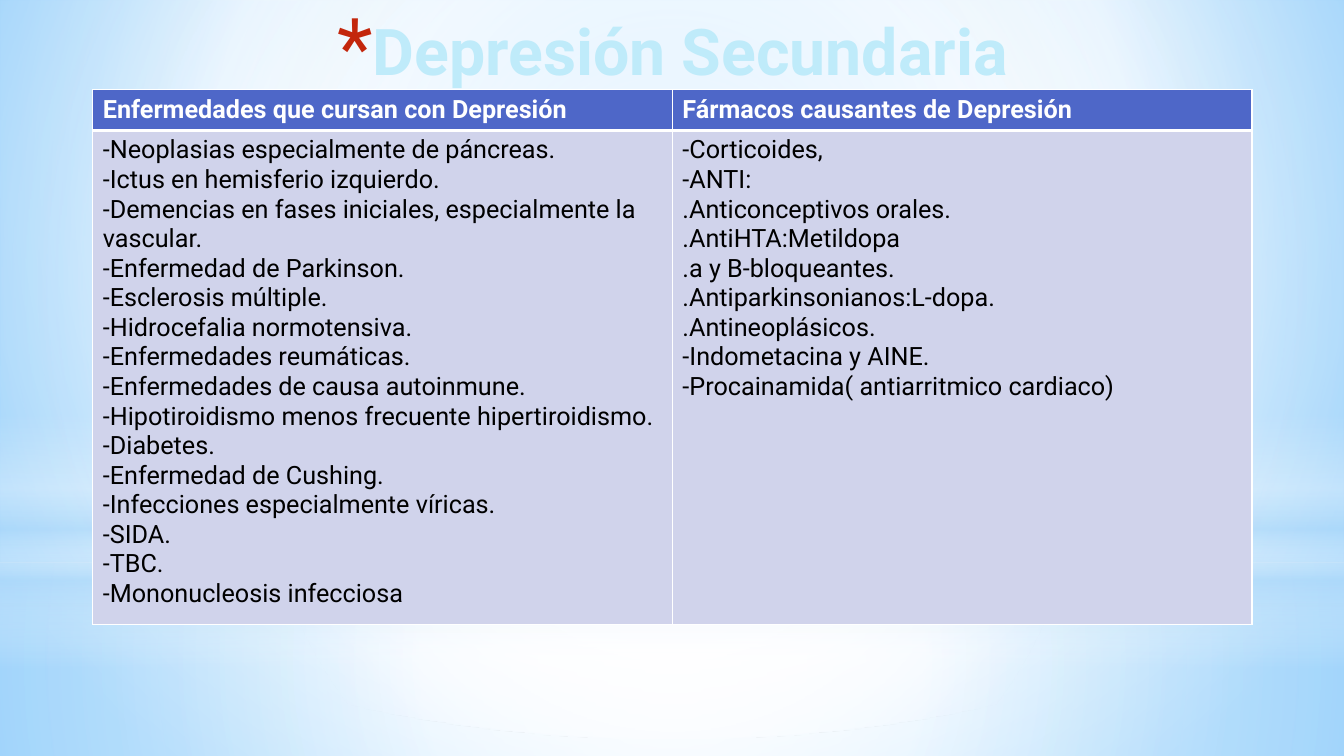
"""Build the slide on secondary depression."""
from dataclasses import dataclass

from lxml.etree import SubElement
from pptx import Presentation
from pptx.dml.color import RGBColor as Rgb
from pptx.enum.shapes import MSO_SHAPE as Preset
from pptx.enum.text import MSO_ANCHOR as Anchor, PP_ALIGN as Align
from pptx.oxml import parse_xml
from pptx.oxml.ns import nsdecls, qn
from pptx.util import Cm, Pt


@dataclass(frozen=True)
class Theme:
    """Colours, font and type sizes."""
    font: str = "Roboto"
    title_size: int = 46
    body_size: int = 18
    white: str = "FFFFFF"
    black: str = "000000"
    haze: str = "B4DCFA"
    sky: str = "9ED5FF"
    deep_sky: str = "5BB9FF"
    title: str = "BFEBFA"
    title_edge: str = "5ECCF3"
    bullet: str = "C3260C"
    header: str = "4E67C8"
    body: str = "D0D3EB"


class SlideBuilder:
    """Holds the theme and the current slide."""

    def __init__(self, slide, theme):
        """Keep the slide and its style."""
        self.slide, self.theme = slide, theme

    def gradient(self, owner, fill, stops, focus=None):
        """Fill with a circular gradient towards focus, or a vertical one."""
        fill.solid()
        plain = owner.xpath(".//p:bgPr/a:solidFill | ./p:spPr/a:solidFill")[0]
        blend = parse_xml(f'<a:gradFill {nsdecls("a")} rotWithShape="1"/>')
        stop_list = SubElement(blend, qn("a:gsLst"))
        for position, colour, opacity in stops:
            stop = SubElement(stop_list, qn("a:gs"), pos=str(position * 1000))
            tint = SubElement(stop, qn("a:srgbClr"), val=colour)
            if opacity < 100:
                SubElement(tint, qn("a:alpha"), val=str(opacity * 1000))
        if focus:
            circle = SubElement(blend, qn("a:path"), path="circle")
            sides = {side: str(share * 1000) for side, share in zip("ltrb", focus)}
            SubElement(circle, qn("a:fillToRect"), **sides)
        else:
            SubElement(blend, qn("a:lin"), ang="5400000", scaled="0")
        plain.getparent().replace(plain, blend)

    def background(self, stops, focus):
        """Paint the slide background."""
        self.gradient(self.slide.element, self.slide.background.fill, stops, focus)

    def glow(self, preset, top, height, stops, focus=None):
        """Add a full-width translucent band of light."""
        band = self.slide.shapes.add_shape(preset, 0, Cm(top), Cm(33.87), Cm(height))
        band.shadow.inherit = False
        band.line.fill.background()
        self.gradient(band.element, band.fill, stops, focus)

    def style(self, paragraph, size, colour, bold):
        """Format every run of a paragraph."""
        for run in paragraph.runs:
            run.font.name, run.font.size, run.font.bold = self.theme.font, Pt(size), bold
            run.font.color.rgb = Rgb.from_string(colour)

    def title(self, text, left, top, width, height):
        """Add the outlined title with its asterisk bullet."""
        theme = self.theme
        frame = self.slide.shapes.add_textbox(Cm(left), Cm(top), Cm(width), Cm(height)).text_frame
        frame.word_wrap, frame.vertical_anchor = True, Anchor.MIDDLE
        frame.text = text
        heading = frame.paragraphs[0]
        heading.alignment = Align.CENTER
        self.style(heading, theme.title_size, theme.title, True)
        heading.runs[0].font.element.insert(0, self.edge("ln", theme.title_edge, 1.75)) \
            if hasattr(heading.runs[0].font, "element") else \
            heading.runs[0]._r.get_or_add_rPr().insert(0, self.edge("ln", theme.title_edge, 1.75))
        layout = heading._p.get_or_add_pPr()
        layout.set("marL", str(Cm(0.89)))
        layout.set("indent", str(-Cm(0.89)))
        SubElement(SubElement(layout, qn("a:buClr")), qn("a:srgbClr"), val=theme.bullet)
        SubElement(layout, qn("a:buSzPct"), val="128000")
        SubElement(layout, qn("a:buFont"), typeface=theme.font)
        SubElement(layout, qn("a:buChar"), char="*")

    def edge(self, tag, colour, points):
        """Return a solid line element."""
        return parse_xml(
            f'<a:{tag} {nsdecls("a")} w="{Pt(points)}"><a:solidFill>'
            f'<a:srgbClr val="{colour}"/></a:solidFill></a:{tag}>')

    def cell(self, cell, lines, fill, colour, bold, borders):
        """Write, border and fill one table cell."""
        cell.text_frame.text = "\n".join(lines)
        for paragraph in cell.text_frame.paragraphs:
            self.style(paragraph, self.theme.body_size, colour, bold)
        properties = cell._tc.get_or_add_tcPr()
        for side, points in zip("LRTB", borders):
            properties.append(self.edge(f"ln{side}", self.theme.white, points))
        cell.fill.solid()
        cell.fill.fore_color.rgb = Rgb.from_string(fill)

    def table(self, columns, left, top, width, heights):
        """Add a table with one header and one list per column."""
        theme = self.theme
        grid = self.slide.shapes.add_table(
            2, len(columns), Cm(left), Cm(top), Cm(width), Cm(sum(heights))).table
        for row, height in zip(grid.rows, heights):
            row.height = Cm(height)
        for index, (header, items) in enumerate(columns.items()):
            self.cell(grid.cell(0, index), [header], theme.header, theme.white, True, (1, 1, 1, 3))
            self.cell(grid.cell(1, index), items, theme.body, theme.black, False, (1, 1, 3, 1))


CAUSES = {
    "Enfermedades que cursan con Depresión": [
        "-Neoplasias especialmente de páncreas.",
        "-Ictus en hemisferio izquierdo.",
        "-Demencias en fases iniciales, especialmente la vascular.",
        "-Enfermedad de Parkinson.",
        "-Esclerosis múltiple.",
        "-Hidrocefalia normotensiva.",
        "-Enfermedades reumáticas.",
        "-Enfermedades de causa autoinmune.",
        "-Hipotiroidismo menos frecuente hipertiroidismo.",
        "-Diabetes.",
        "-Enfermedad de Cushing.",
        "-Infecciones especialmente víricas.",
        "-SIDA.",
        "-TBC.",
        "-Mononucleosis infecciosa",
    ],
    "Fármacos causantes de Depresión": [
        "-Corticoides,",
        "-ANTI:",
        ".Anticonceptivos orales.",
        ".AntiHTA:Metildopa",
        ".a y B-bloqueantes.",
        ".Antiparkinsonianos:L-dopa.",
        ".Antineoplásicos.",
        "-Indometacina y AINE.",
        "-Procainamida( antiarritmico cardiaco)",
    ],
}


def main():
    """Compose and save the slide."""
    deck = Presentation()
    deck.slide_width, deck.slide_height = Cm(33.87), Cm(19.05)
    theme = Theme()
    white, haze = theme.white, theme.haze
    centre = (50, 50, 50, 50)
    page = SlideBuilder(deck.slides.add_slide(deck.slide_layouts[6]), theme)
    page.background([(0, theme.sky, 100), (60, white, 100), (100, theme.deep_sky, 100)],
                    (20, 10, 20, 60))
    page.glow(Preset.RECTANGLE, 14.17, 4.88,
              [(0, white, 91), (37, white, 76), (100, haze, 79)], centre)
    page.glow(Preset.RECTANGLE, 0, 14.17,
              [(0, white, 89), (48, white, 62), (100, haze, 79)], centre)
    page.glow(Preset.RECTANGLE, 10.46, 6.35,
              [(0, white, 0), (29, white, 30), (45, haze, 40),
               (55, white, 26), (65, haze, 60), (100, white, 0)])
    page.glow(Preset.OVAL, 4.45, 14.17, [(0, white, 100), (56, white, 0)], centre)
    page.title("Depresión Secundaria", 2.34, 0.25, 29.21, 2.01)
    page.table(CAUSES, 2.34, 2.26, 29.21, (1.03, 12.17))
    deck.save("out.pptx")


if __name__ == "__main__":
    main()
